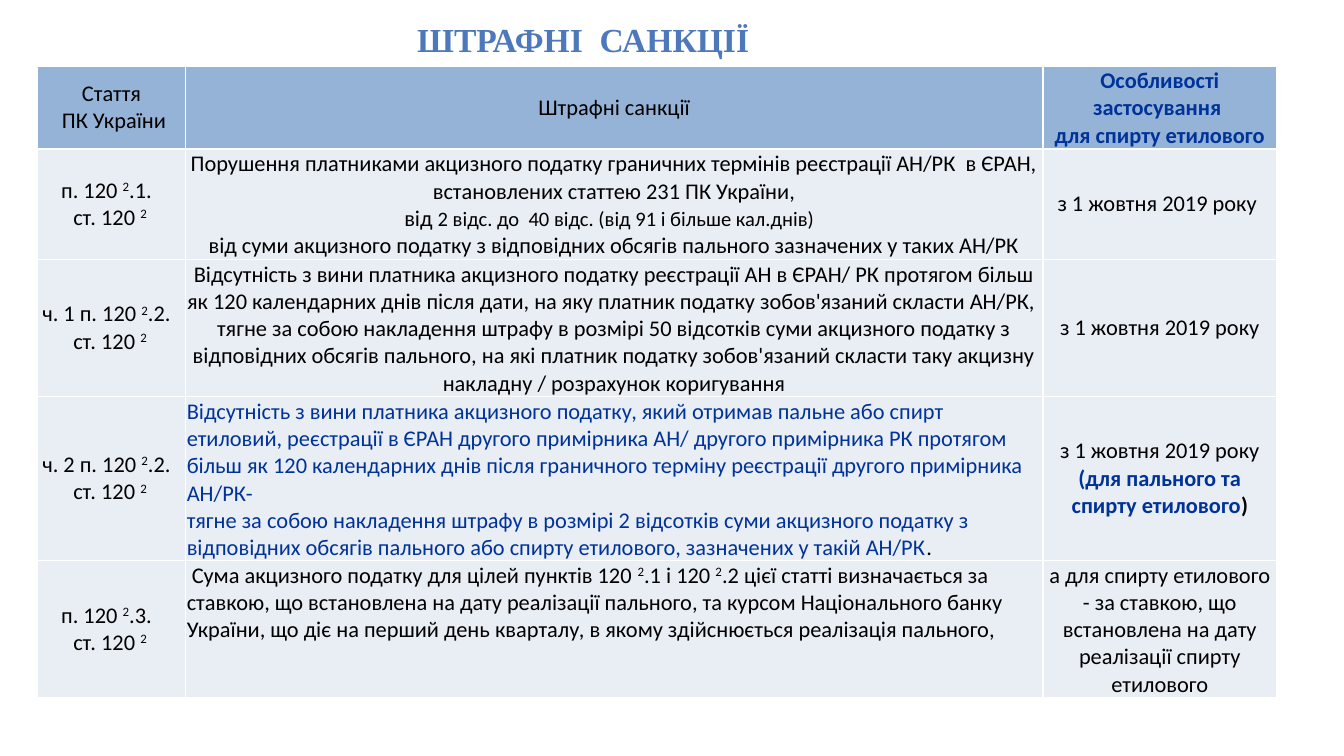
"""Build a slide with a table of penalties for excise invoice registration."""
import dataclasses

import lxml.etree
import pptx
import pptx.dml.color
import pptx.enum.text
import pptx.oxml.ns
import pptx.util

Inches = pptx.util.Inches
Pt = pptx.util.Pt
RGB = pptx.dml.color.RGBColor.from_string
qn = pptx.oxml.ns.qn
ALIGN = pptx.enum.text.PP_ALIGN
ANCHOR = pptx.enum.text.MSO_ANCHOR


@dataclasses.dataclass(frozen=True)
class Theme:
    header: str = "95B3D7"
    body: str = "E9EDF4"
    border: str = "FFFFFF"
    ink: str = "000000"
    accent: str = "003399"
    title_stops: tuple = ((0, "7494C9"), (49, "4D79BC"), (50, "346AAA"), (92, "325F94"), (100, "315D91"))
    title_font: str = "Times New Roman"
    table_font: str = "Calibri"
    title_size: int = 18
    table_size: int = 12
    small_size: int = 11


theme = Theme()
styles = {
    "plain": (theme.ink, {"size": Pt(theme.table_size), "bold": False}),
    "small": (theme.ink, {"size": Pt(theme.small_size), "bold": False}),
    "accent": (theme.accent, {"size": Pt(theme.table_size), "bold": False}),
    "strong": (theme.accent, {"size": Pt(theme.table_size), "bold": True}),
    "strong_ink": (theme.ink, {"size": Pt(theme.table_size), "bold": True}),
}


def add_styled_text(paragraph, text, style="plain"):
    """Add text to a paragraph, with ^marks^ around superscripts."""
    color, formats = styles[style]
    for part_index, part in enumerate(text.split("^")):
        for line_index, line in enumerate(part.split("\n")):
            if line_index:
                paragraph.add_line_break()
            if not line:
                continue
            run = paragraph.add_run()
            run.text = line
            run.font.name = theme.table_font
            run.font.color.rgb = RGB(color)
            for name, value in formats.items():
                setattr(run.font, name, value)
            if part_index % 2:
                run._r.get_or_add_rPr().set("baseline", "30000")


def add_solid_fill(parent, color):
    """Add a solid fill element to an XML parent."""
    fill = lxml.etree.SubElement(parent, qn("a:solidFill"))
    lxml.etree.SubElement(fill, qn("a:srgbClr"), val=color)


presentation = pptx.Presentation()
presentation.slide_width = Inches(10)
presentation.slide_height = Inches(10 * 9 / 16)
slide = presentation.slides.add_slide(presentation.slide_layouts[6])

heading = slide.shapes.add_textbox(Inches(0.59), Inches(0.13), Inches(7.5), Inches(0.32)).text_frame
heading.word_wrap = True
heading.vertical_anchor = ANCHOR.MIDDLE
heading.paragraphs[0].alignment = ALIGN.CENTER
heading_run = heading.paragraphs[0].add_run()
heading_run.text = "ШТРАФНІ  САНКЦІЇ"
for name, value in {"name": theme.title_font, "size": Pt(theme.title_size), "bold": True}.items():
    setattr(heading_run.font, name, value)
heading_run.font.fill.gradient()
heading_run.font.fill.gradient_angle = 270
stop_list = heading_run._r.get_or_add_rPr().find(".//" + qn("a:gsLst"))
for stop in list(stop_list):
    stop_list.remove(stop)
for position, color in theme.title_stops:
    stop = lxml.etree.SubElement(stop_list, qn("a:gs"), pos=str(position * 1000))
    lxml.etree.SubElement(stop, qn("a:srgbClr"), val=color)

start_date = "з 1 жовтня 2019 року"
penalties = [
    (
        [["Стаття\n ПК України"]],
        [["Штрафні санкції"]],
        [[("Особливості застосування \nдля спирту етилового", "strong")]],
    ),
    (
        [["п. 120 ^2^.1.  \nст. 120 ^2 ^"]],
        [[
            "Порушення платниками акцизного податку граничних термінів реєстрації АН/РК  в ЄРАН, "
            "встановлених статтею 231 ПК України,\nвід ",
            ("2 відс. до  40 відс. (від 91 і більше кал.днів)  \n", "small"),
            "від суми акцизного податку з відповідних обсягів пального зазначених у таких АН/РК",
        ]],
        [[start_date + " "]],
    ),
    (
        [["ч. 1 п. 120 ^2^.2.  \nст. 120 ^2 ^"]],
        [[
            "Відсутність з вини платника акцизного податку реєстрації АН в ЄРАН/ РК протягом більш "
            "як 120 календарних днів після дати, на яку платник податку зобов'язаний скласти АН/РК, \n"
            "тягне за собою накладення штрафу в розмірі 50 відсотків суми акцизного податку з "
            "відповідних обсягів пального, на які платник податку зобов'язаний скласти таку акцизну "
            "накладну / розрахунок коригування"
        ]],
        [[start_date]],
    ),
    (
        [["ч. 2 п. 120 ^2^.2.  \nст. 120 ^2 ^"]],
        [[
            (
                "Відсутність з вини платника акцизного податку, який отримав пальне або спирт "
                "етиловий, реєстрації в ЄРАН другого примірника АН/ другого примірника РК протягом "
                "більш як 120 календарних днів після граничного терміну реєстрації другого примірника "
                "АН/РК-\nтягне за собою накладення штрафу в розмірі 2 відсотків суми акцизного податку з "
                "відповідних обсягів пального або спирту етилового, зазначених у такій АН/РК",
                "accent",
            ),
            ".",
        ]],
        [[start_date], [("(для пального та спирту етилового", "strong"), (")", "strong_ink")]],
    ),
    (
        [["п. 120 ^2^.3.  \nст. 120 ^2 ^"]],
        [[
            " Сума акцизного податку для цілей пунктів 120 ^2^.1 і 120 ^2^.2 цієї статті визначається за "
            "ставкою, що встановлена на дату реалізації пального, та курсом Національного банку "
            "України, що діє на перший день кварталу, в якому здійснюється реалізація пального,"
        ]],
        [["а для спирту етилового - за ставкою, що встановлена на дату реалізації спирту етилового"]],
    ),
]
column_widths = [1.1, 6.38, 1.74]
row_heights = [0.31, 0.77, 0.86, 0.83, 0.71]
left_aligned = {(3, 1), (4, 1)}
top_anchored = {(1, 1), (2, 1), (3, 1), (4, 1), (4, 2)}
cell_margins = {
    "margin_left": Inches(0.01),
    "margin_right": Inches(0.01),
    "margin_top": Inches(0.01),
    "margin_bottom": Inches(0.01),
}

penalty_frame = slide.shapes.add_table(
    len(penalties), len(column_widths), Inches(0.28), Inches(0.49), Inches(9.22), Inches(4.63)
)
penalty_table = penalty_frame.table
penalty_table.first_row = False
penalty_table.horz_banding = False
for column, width in zip(penalty_table.columns, column_widths):
    column.width = Inches(width)
for row, height in zip(penalty_table.rows, row_heights):
    row.height = Inches(height)
penalty_frame.height = Inches(4.63)

for row_index, entries in enumerate(penalties):
    for column_index, paragraphs in enumerate(entries):
        place = (row_index, column_index)
        cell = penalty_table.cell(*place)
        for name, value in cell_margins.items():
            setattr(cell, name, value)
        cell.vertical_anchor = ANCHOR.TOP if place in top_anchored else ANCHOR.MIDDLE
        for side in ("a:lnL", "a:lnR", "a:lnT", "a:lnB"):
            border = lxml.etree.SubElement(cell._tc.get_or_add_tcPr(), qn(side), w=str(Pt(1)))
            add_solid_fill(border, theme.border)
        cell.fill.solid()
        cell.fill.fore_color.rgb = RGB(theme.body if row_index else theme.header)
        for paragraph_index, pieces in enumerate(paragraphs):
            frame = cell.text_frame
            paragraph = frame.add_paragraph() if paragraph_index else frame.paragraphs[0]
            paragraph.alignment = ALIGN.LEFT if place in left_aligned else ALIGN.CENTER
            for piece in pieces:
                add_styled_text(paragraph, *([piece] if isinstance(piece, str) else piece))

presentation.save("out.pptx")
